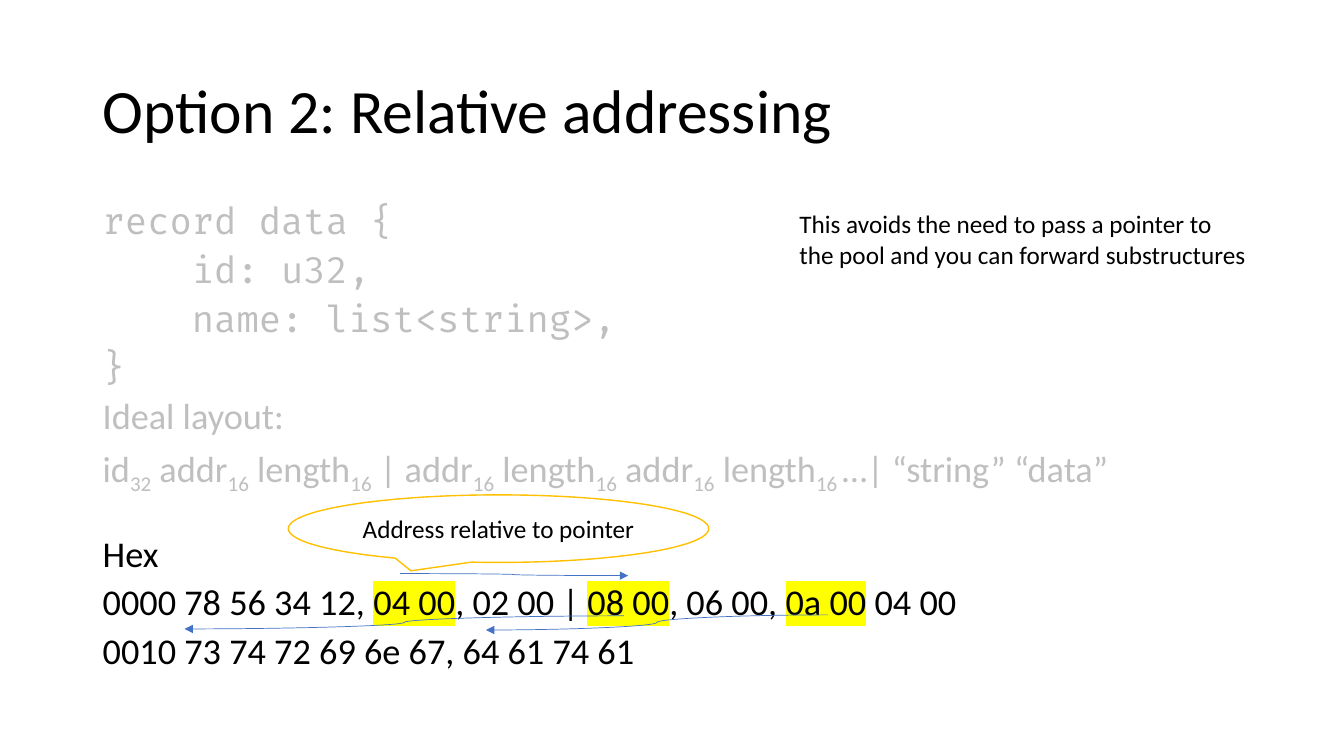
from lxml import etree
from pptx import Presentation
from pptx import util as u
from pptx.dml.color import RGBColor
from pptx.enum import shapes, text
from pptx.oxml import ns

BLACK = RGBColor(0x00, 0x00, 0x00)
WHITE = RGBColor(0xFF, 0xFF, 0xFF)
GREY = RGBColor(0xBF, 0xBF, 0xBF)
BLUE = RGBColor(0x44, 0x72, 0xC4)
GOLD = RGBColor(0xFF, 0xC0, 0x00)
HIGHLIGHT = "FFFF00"

BODY_SIZE = 25.9
NOTE_SIZE = 18

RECORD = ["record data {", "    id: u32,", "    name: list<string>,", "}"]
# Field names, each followed by its width in bits as a subscript
FIELDS = [("id", "32"), (" addr", "16"), (" length", "16"),
          (" | addr", "16"), (" length", "16"),
          (" addr", "16"), (" length", "16 ")]
# Pieces of the first hex row; True marks an address
HEX_ROW = [("0000 78 56 34 12, ", False), ("04 00", True),
           (", 02 00 | ", False), ("08 00", True),
           (", 06 00, ", False), ("0a 00", True), (" 04 00", False)]
# Start and end of each pointer arrow, in inches
ARROWS = [(3.97, 5.69, 6.23, 5.71),
          (6.19, 6.11, 1.83, 6.24),
          (8.21, 6.1, 4.82, 6.25)]


def add_span(para, words, size, color=BLACK, font="Calibri"):
    span = para.add_run()
    span.text = words
    span.font.size = u.Pt(size)
    span.font.name = font
    span.font.color.rgb = color
    return span


def add_subscript(para, words, size, color):
    span = add_span(para, words, size, color)
    span.font._element.set("baseline", "-25000")


def highlight(span):
    mark = etree.Element(ns.qn("a:highlight"))
    etree.SubElement(mark, ns.qn("a:srgbClr"), val=HIGHLIGHT)
    span.font._element.find(ns.qn("a:solidFill")).addnext(mark)


def add_sized_break(para, size):
    para.add_line_break()
    line_break = para._p.findall(ns.qn("a:br"))[-1]
    etree.SubElement(line_break, ns.qn("a:rPr"), sz=str(int(size * 100)))


def add_box(page, left, top, width, height, wrap=True):
    box = page.shapes.add_textbox(u.Inches(left), u.Inches(top),
                                  u.Inches(width), u.Inches(height))
    box.text_frame.word_wrap = wrap
    return box.text_frame


def add_body_para(frame):
    used = frame.paragraphs[0].runs
    para = frame.add_paragraph() if used else frame.paragraphs[0]
    para.line_spacing = 0.8
    para.space_before = u.Pt(10)
    return para


def add_title(page, words):
    frame = add_box(page, 0.92, 0.4, 11.5, 1.45)
    frame.vertical_anchor = text.MSO_ANCHOR.MIDDLE
    para = frame.paragraphs[0]
    para.line_spacing = 0.9
    add_span(para, words, 44)


def add_body(page):
    frame = add_box(page, 0.92, 2, 11.5, 4.76)

    # Record definition
    for line in RECORD:
        add_span(add_body_para(frame), line, BODY_SIZE, GREY, "Fira Code")

    # Ideal layout
    add_span(add_body_para(frame), "Ideal layout:", BODY_SIZE, GREY)
    para = add_body_para(frame)
    for field, bits in FIELDS:
        add_span(para, field, BODY_SIZE, GREY)
        add_subscript(para, bits, BODY_SIZE, GREY)
    add_span(para, "…| “string” “data”", BODY_SIZE, GREY)
    add_sized_break(para, BODY_SIZE)

    # Hex dump
    add_span(add_body_para(frame), "Hex", BODY_SIZE)
    para = add_body_para(frame)
    for piece, is_address in HEX_ROW:
        span = add_span(para, piece, BODY_SIZE)
        if is_address:
            highlight(span)
    add_span(add_body_para(frame), "0010 73 74 72 69 6e 67, 64 61 74 61", BODY_SIZE)


def add_arrow(page, *ends):
    arrow = page.shapes.add_connector(shapes.MSO_CONNECTOR.CURVE,
                                      *[u.Inches(value) for value in ends])
    arrow.line.color.rgb = BLUE
    arrow.line.width = u.Pt(0.5)
    etree.SubElement(arrow.line._get_or_add_ln(), ns.qn("a:tailEnd"), type="triangle")
    etree.SubElement(arrow._element.spPr, ns.qn("a:effectLst"))


def add_callout(page, words):
    callout = page.shapes.add_shape(shapes.MSO_SHAPE.OVAL_CALLOUT,
                                    u.Inches(2.86), u.Inches(4.91),
                                    u.Inches(4.17), u.Inches(0.67))
    callout.shadow.inherit = False
    callout.fill.solid()
    callout.fill.fore_color.rgb = WHITE
    callout.line.color.rgb = GOLD
    callout.line.width = u.Pt(1)
    frame = callout.text_frame
    frame.vertical_anchor = text.MSO_ANCHOR.MIDDLE
    para = frame.paragraphs[0]
    para.alignment = text.PP_ALIGN.CENTER
    add_span(para, words, NOTE_SIZE)


def add_note(page, *lines):
    frame = add_box(page, 7.83, 2.02, 4.68, 0.71, wrap=False)
    frame.auto_size = text.MSO_AUTO_SIZE.SHAPE_TO_FIT_TEXT
    para = frame.paragraphs[0]
    for number, line in enumerate(lines):
        if number:
            add_sized_break(para, NOTE_SIZE)
        add_span(para, line, NOTE_SIZE)


def main():
    deck = Presentation()
    deck.slide_width = u.Inches(13.33)
    deck.slide_height = u.Inches(7.5)
    page = deck.slides.add_slide(deck.slide_layouts[6])

    add_title(page, "Option 2: Relative addressing")
    add_body(page)
    for ends in ARROWS:
        add_arrow(page, *ends)
    add_callout(page, "Address relative to pointer")
    add_note(page, "This avoids the need to pass a pointer to ",
             "the pool and you can forward substructures")

    deck.save("out.pptx")


if __name__ == "__main__":
    main()
